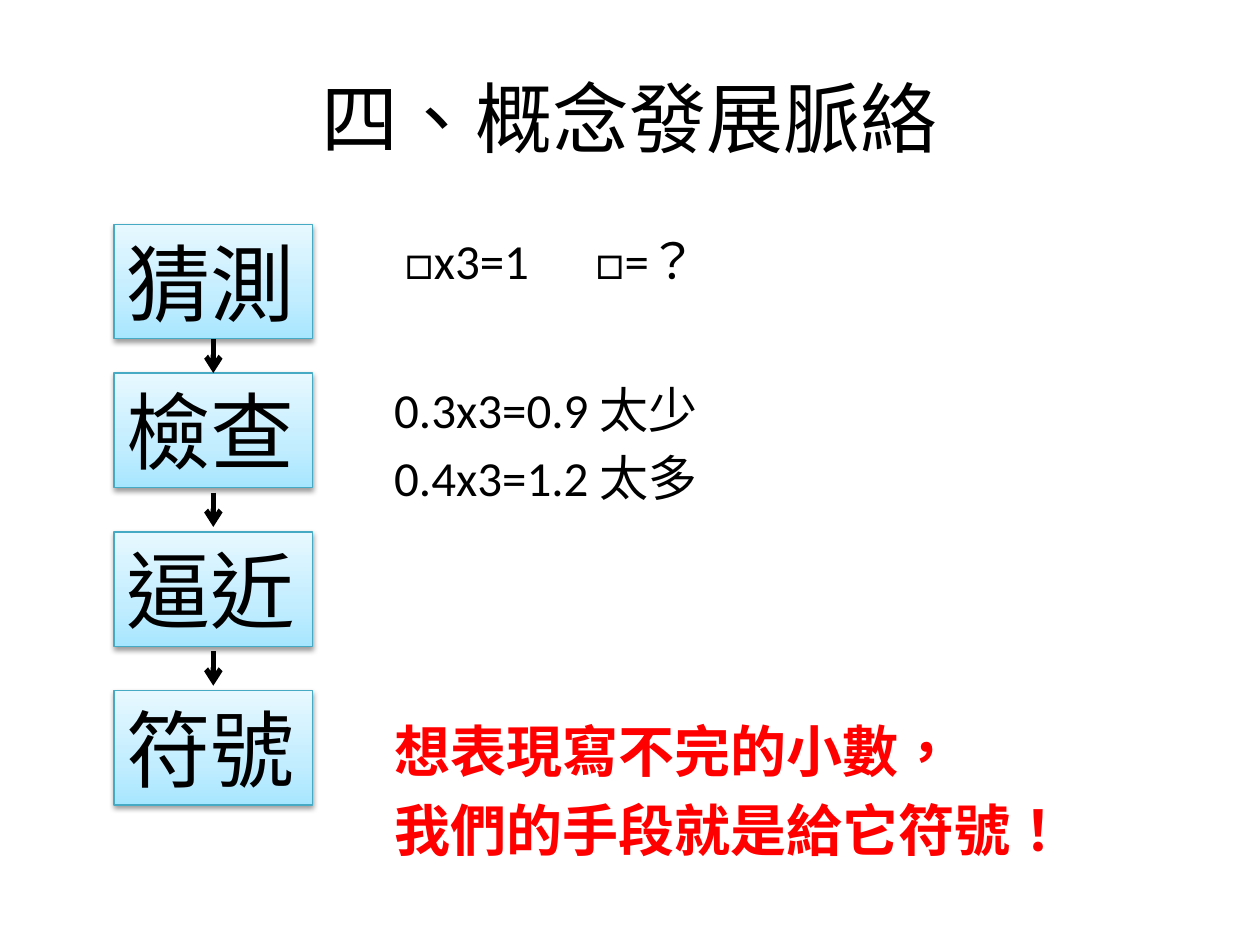
from lxml.etree import SubElement
from pptx import Presentation
from pptx.dml.color import RGBColor
from pptx.enum.lang import MSO_LANGUAGE_ID
from pptx.enum.shapes import MSO_CONNECTOR, MSO_SHAPE
from pptx.enum.text import MSO_ANCHOR, PP_ALIGN
from pptx.oxml import parse_xml
from pptx.oxml.ns import nsdecls, qn
from pptx.util import Pt

BLACK = RGBColor(0x00, 0x00, 0x00)
RED = RGBColor(0xFF, 0x00, 0x00)
BOX_LINE = RGBColor(0x46, 0xAA, 0xC5)
GRADIENT = [(0, RGBColor(0xA7, 0xE6, 0xFF)),
            (35, RGBColor(0xC1, 0xED, 0xFF)),
            (100, RGBColor(0xE7, 0xF8, 0xFF))]
LATIN_FONT = "Calibri"
CHINESE_FONT = "Noto Sans CJK SC"

STEPS = [("猜測", 128.2), ("檢查", 213.2), ("逼近", 304), ("符號", 394.7)]
STEP_LEFT, STEP_WIDTH, STEP_HEIGHT = 65.2, 113.4, 65.4
ARROW_LENGTH = 19.6
NOTE_WIDTH, NOTE_HEIGHT = 453.6, 113


def write_text(frame, lines, size, color=BLACK, font=LATIN_FONT, bold=False,
               align=PP_ALIGN.LEFT, anchor=MSO_ANCHOR.TOP, tab=None):
    frame.word_wrap = True
    frame.vertical_anchor = anchor
    for index, line in enumerate(lines):
        paragraph = frame.paragraphs[0] if index == 0 else frame.add_paragraph()
        paragraph.alignment = align
        if index:
            paragraph.space_before = Pt(size * 0.2)
        if tab:
            tabs = SubElement(paragraph._p.get_or_add_pPr(), qn("a:tabLst"))
            SubElement(tabs, qn("a:tab"), pos=str(Pt(tab)), algn="l")
        run = paragraph.add_run()
        run.text = line
        run.font.size = Pt(size)
        run.font.bold = bold
        run.font.name = font
        run.font.language_id = MSO_LANGUAGE_ID.TRADITIONAL_CHINESE
        run.font.color.rgb = color
        SubElement(run._r.get_or_add_rPr(), qn("a:ea"), typeface=CHINESE_FONT)


def add_text(slide, left, top, width, height, lines, **text_format):
    box = slide.shapes.add_textbox(Pt(left), Pt(top), Pt(width), Pt(height))
    write_text(box.text_frame, lines, **text_format)


def style_step(shape):
    """Give a step box its gradient, outline and soft shadow."""
    shape.line.color.rgb = BOX_LINE
    shape.line.width = Pt(0.75)
    stops = "".join(f'<a:gs pos="{position * 1000}"><a:srgbClr val="{color}"/></a:gs>'
                    for position, color in GRADIENT)
    properties = shape._element.spPr
    properties.find(qn("a:ln")).addprevious(parse_xml(
        f'<a:gradFill {nsdecls("a")} rotWithShape="1"><a:gsLst>{stops}</a:gsLst>'
        '<a:lin ang="16200000" scaled="0"/></a:gradFill>'))
    properties.append(parse_xml(
        f'<a:effectLst {nsdecls("a")}><a:outerShdw blurRad="{Pt(3.1)}" '
        f'dist="{Pt(1.6)}" dir="5400000" rotWithShape="0"><a:srgbClr val="{BLACK}">'
        '<a:alpha val="38000"/></a:srgbClr></a:outerShdw></a:effectLst>'))


def add_step(slide, label, top):
    shape = slide.shapes.add_shape(MSO_SHAPE.RECTANGLE, Pt(STEP_LEFT), Pt(top),
                                   Pt(STEP_WIDTH), Pt(STEP_HEIGHT))
    style_step(shape)
    write_text(shape.text_frame, [label], size=48, font=CHINESE_FONT,
               anchor=MSO_ANCHOR.MIDDLE)
    return shape


def add_arrow(slide, top):
    center = Pt(STEP_LEFT + STEP_WIDTH / 2)
    arrow = slide.shapes.add_connector(MSO_CONNECTOR.STRAIGHT, center, Pt(top),
                                       center, Pt(top + ARROW_LENGTH))
    arrow.line.color.rgb = BLACK
    arrow.line.width = Pt(3)
    SubElement(arrow.line._get_or_add_ln(), qn("a:tailEnd"), type="arrow")
    SubElement(arrow._element.spPr, qn("a:effectLst"))
    return arrow


def add_steps(slide):
    boxes = [add_step(slide, label, top) for label, top in STEPS]
    tops = [top for _, top in STEPS]
    arrows = []
    for upper, lower in zip(tops, tops[1:]):
        middle = (upper + STEP_HEIGHT + lower) / 2
        arrows.append(add_arrow(slide, middle - ARROW_LENGTH / 2))
    # Only the first arrow fills the whole gap between its boxes.
    arrows[0].begin_connect(boxes[0], 2)
    arrows[0].end_connect(boxes[1], 0)


def main():
    presentation = Presentation()
    presentation.slide_width, presentation.slide_height = Pt(720), Pt(540)
    slide = presentation.slides.add_slide(presentation.slide_layouts[6])
    add_text(slide, 36, 21.6, 648, 90, ["四、概念發展脈絡"], size=44,
             font=CHINESE_FONT, align=PP_ALIGN.CENTER, anchor=MSO_ANCHOR.MIDDLE)
    add_text(slide, 218.2, 406, NOTE_WIDTH, NOTE_HEIGHT,
             ["想表現寫不完的小數，", "我們的手段就是給它符號！"],
             size=32, color=RED, font=CHINESE_FONT, bold=True)
    add_text(slide, 218.2, 213.2, NOTE_WIDTH, NOTE_HEIGHT,
             ["0.3x3=0.9 太少", "0.4x3=1.2 太多"], size=28)
    add_steps(slide)
    add_text(slide, 224, 128.2, NOTE_WIDTH, NOTE_HEIGHT, ["□x3=1\t□=？"],
             size=28, tab=109)
    presentation.save("out.pptx")


if __name__ == "__main__":
    main()
